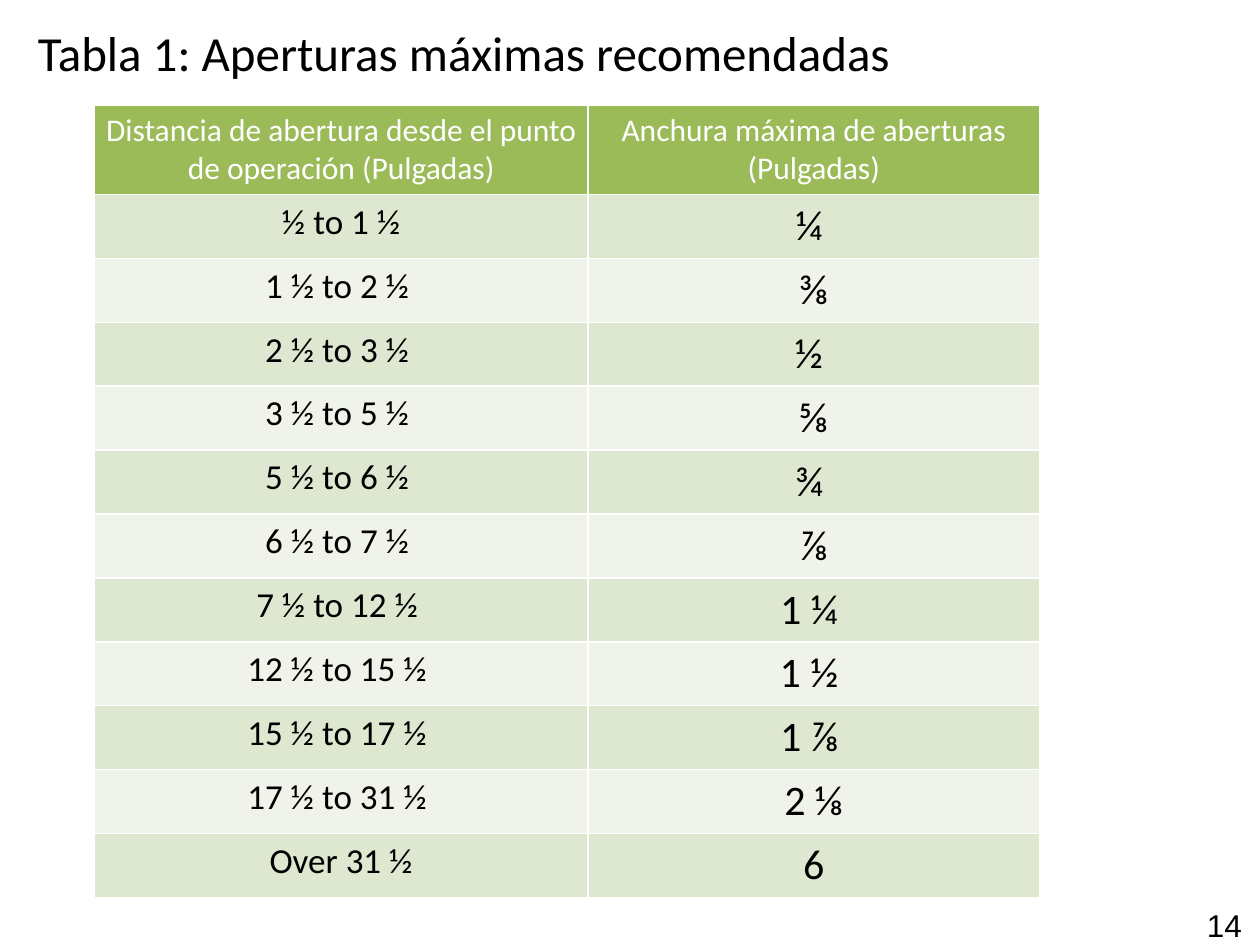
from pptx import Presentation
from pptx.dml.color import RGBColor
from pptx.enum.text import MSO_ANCHOR as ANCHOR, MSO_AUTO_SIZE as FIT, PP_ALIGN as ALIGN
from pptx.util import Pt

HEADERS = ["Distancia de abertura desde el punto de operación (Pulgadas)",
           "Anchura máxima de aberturas (Pulgadas)"]
OPENINGS = [
    ("½ to 1 ½", "¼ "),
    ("1 ½ to 2 ½ ", "⅜"),
    ("2 ½ to 3 ½ ", "½ "),
    ("3 ½ to 5 ½ ", "⅝"),
    ("5 ½ to 6 ½ ", "¾ "),
    ("6 ½ to 7 ½ ", "⅞"),
    ("7 ½ to 12 ½ ", "1 ¼ "),
    ("12 ½ to 15 ½ ", "1 ½ "),
    ("15 ½ to 17 ½ ", "1 ⅞ "),
    ("17 ½ to 31 ½ ", "2 ⅛"),
    ("Over 31 ½", "6"),
]


def color(value):
    return RGBColor.from_string(value)


def apply(target, values):
    for name, value in values.items():
        setattr(target, name, value)


class Deck:
    font = "Calibri"
    ink, paper = "000000", "FFFFFF"
    header_fill, bands = "9BBB59", ("DEE7D0", "EFF3E9")
    margins = {f"margin_{side}": Pt(3.6) for side in ("left", "top", "right", "bottom")}

    def __init__(self, prs):
        self.s = prs.slides.add_slide(prs.slide_layouts[5])

    def text(self, tf, text, size, ink=ink, align=ALIGN.LEFT, font=font):
        p = tf.paragraphs[0]
        p.alignment = align
        r = p.add_run()
        r.text = text
        apply(r.font, {"name": font, "size": Pt(size), "bold": False})
        r.font.color.rgb = color(ink)

    def title(self, text, left, top, width, height):
        sp = self.s.shapes.title
        apply(sp, {"left": Pt(left), "top": Pt(top), "width": Pt(width), "height": Pt(height)})
        apply(sp.text_frame, {**self.margins, "word_wrap": True, "auto_size": FIT.NONE,
                              "vertical_anchor": ANCHOR.MIDDLE})
        self.text(sp.text_frame, text, 28)

    def page_number(self, text, left, top, width, height):
        sp = self.s.shapes.add_textbox(Pt(left), Pt(top), Pt(width), Pt(height))
        apply(sp.text_frame, {**self.margins, "word_wrap": False,
                              "auto_size": FIT.SHAPE_TO_FIT_TEXT})
        self.text(sp.text_frame, text, 18, font="Arial")

    def cell(self, cell, text, size, ink, fill):
        apply(cell, self.margins)
        cell.fill.solid()
        cell.fill.fore_color.rgb = color(fill)
        self.text(cell.text_frame, text, size, ink, ALIGN.CENTER)

    def table(self, headers, rows, left, top, widths, header_height, row_height):
        height = header_height + row_height * len(rows)
        frame = self.s.shapes.add_table(len(rows) + 1, len(headers), Pt(left), Pt(top),
                                        Pt(sum(widths)), Pt(height))
        table = frame.table
        for column, width in zip(table.columns, widths):
            column.width = Pt(width)
        for i, row in enumerate(table.rows):
            row.height = Pt(row_height if i else header_height)
        for j, text in enumerate(headers):
            self.cell(table.cell(0, j), text, 18, self.paper, self.header_fill)
        for i, row in enumerate(rows):
            for j, (text, size) in enumerate(zip(row, (20, 24))):
                self.cell(table.cell(i + 1, j), text, size, self.ink, self.bands[i % 2])


def main():
    prs = Presentation()
    apply(prs, {"slide_width": Pt(720), "slide_height": Pt(540)})
    deck = Deck(prs)
    deck.table(HEADERS, OPENINGS, 54, 60, (282, 258), 50.4, 36.5)
    deck.title("Tabla 1: Aperturas máximas recomendadas", 18, -7.2, 592.5, 73.4)
    deck.page_number("14", 686, 514, 28, 27.4)
    prs.save("out.pptx")


if __name__ == "__main__":
    main()
